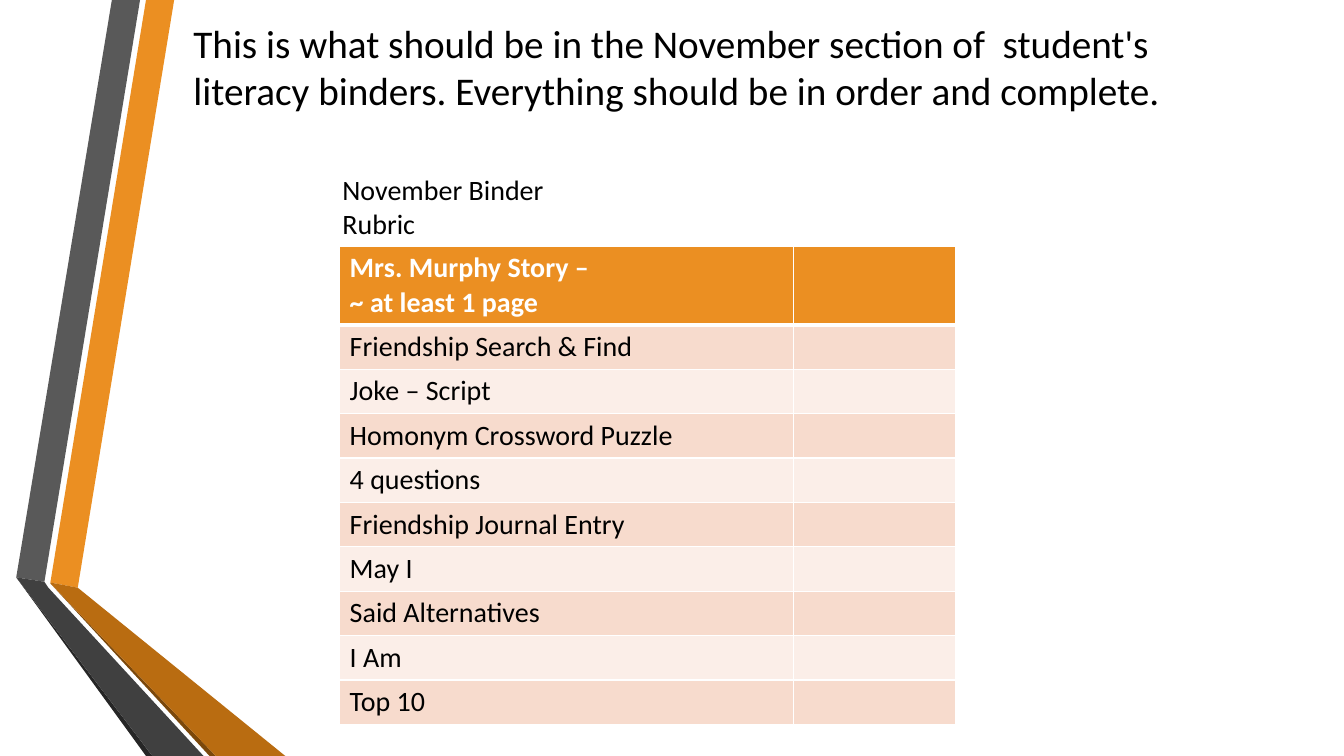
from pptx import Presentation
from pptx.dml.color import RGBColor
from pptx.enum.text import MSO_ANCHOR, MSO_AUTO_SIZE, PP_ALIGN
from pptx.oxml import parse_xml
from pptx.oxml.ns import nsdecls
from pptx.util import Cm, Pt

ORANGE = RGBColor(0xEB, 0x8F, 0x22)
DARK_ORANGE = RGBColor(0xB9, 0x6C, 0x11)
BROWN = RGBColor(0x7B, 0x48, 0x0B)
GRAY = RGBColor(0x59, 0x59, 0x59)
DARK_GRAY = RGBColor(0x40, 0x40, 0x40)
CHARCOAL = RGBColor(0x26, 0x26, 0x26)
PEACH = RGBColor(0xF7, 0xDB, 0xCD)
PALE_PEACH = RGBColor(0xFB, 0xEE, 0xE8)
WHITE = RGBColor(0xFF, 0xFF, 0xFF)
BLACK = RGBColor(0x00, 0x00, 0x00)


def style_text(frame, size, color, bold=False):
    for para in frame.paragraphs:
        para.alignment = PP_ALIGN.LEFT
        para.font.name = "Calibri"
        para.font.size = Pt(size)
        para.font.bold = bold
        para.font.color.rgb = color


def add_border(cell, side, points):
    line = parse_xml(
        f'<a:{side} {nsdecls("a")} w="{Pt(points)}"><a:solidFill>'
        f'<a:srgbClr val="{WHITE}"/></a:solidFill></a:{side}>'
    )
    cell._tc.get_or_add_tcPr().append(line)


deck = Presentation()
deck.slide_width = Cm(33.87)
deck.slide_height = Cm(19.05)
page = deck.slides.add_slide(deck.slide_layouts[5])

ribbons = [
    (ORANGE, [(1.27, 14.68), (1.96, 14.81), (4.39, 0), (3.68, 0)]),
    (GRAY, [(3.53, 0), (2.82, 0), (0.41, 14.55), (1.12, 14.66)]),
    (CHARCOAL, [(0.41, 14.55), (3.68, 19.05), (3.84, 19.05)]),
    (BROWN, [(1.27, 14.7), (5.28, 19.05), (5.44, 19.05)]),
    (DARK_ORANGE, [(1.27, 14.7), (5.44, 19.05), (7.19, 19.05), (1.96, 14.81), (1.27, 14.68)]),
    (DARK_GRAY, [(5.13, 19.05), (1.22, 14.81), (1.12, 14.66), (0.41, 14.55), (3.84, 19.05)]),
]
for color, corners in ribbons:
    points = [(Cm(x), Cm(y)) for x, y in corners]
    builder = page.shapes.build_freeform(*points[0])
    builder.add_line_segments(points[1:], close=True)
    ribbon = builder.convert_to_shape()
    ribbon.shadow.inherit = False
    ribbon.fill.solid()
    ribbon.fill.fore_color.rgb = color
    ribbon.line.fill.background()

entries = [
    "Mrs. Murphy Story –\n~ at least 1 page",
    "Friendship Search & Find",
    "Joke – Script",
    "Homonym Crossword Puzzle",
    "4 questions",
    "Friendship Journal Entry",
    "May I",
    "Said Alternatives",
    "I Am",
    "Top 10",
]
rubric = page.shapes.add_table(
    len(entries), 2, Cm(8.56), Cm(6.2), Cm(15.52), Cm(11.84)
).table
rubric.columns[0].width = Cm(11.43)
rubric.columns[1].width = Cm(4.09)
for index, entry in enumerate(entries):
    header = index == 0
    rubric.rows[index].height = Cm(1.94 if header else 1.1)
    rubric.cell(index, 0).text = entry
    for cell in rubric.rows[index].cells:
        style_text(cell.text_frame, 20, WHITE if header else BLACK, header)
        for side in ("lnL", "lnR", "lnT", "lnB"):
            thick = (header and side == "lnB") or (index == 1 and side == "lnT")
            add_border(cell, side, 3 if thick else 1)
        cell.fill.solid()
        cell.fill.fore_color.rgb = ORANGE if header else PEACH if index % 2 else PALE_PEACH

caption = page.shapes.add_textbox(Cm(8.38), Cm(4.22), Cm(7.4), Cm(2))
caption.text_frame.word_wrap = True
caption.text_frame.text = "November Binder Rubric"
style_text(caption.text_frame, 20, BLACK)

title = page.shapes.title
title.left, title.top, title.width, title.height = Cm(4.62), Cm(0.36), Cm(25.98), Cm(2.64)
title.text_frame.text = (
    "This is what should be in the November section of  student's "
    "literacy binders. Everything should be in order and complete."
)
title.text_frame.word_wrap = True
title.text_frame.auto_size = MSO_AUTO_SIZE.NONE
title.text_frame.vertical_anchor = MSO_ANCHOR.TOP
style_text(title.text_frame, 28, BLACK)

deck.save("out.pptx")
